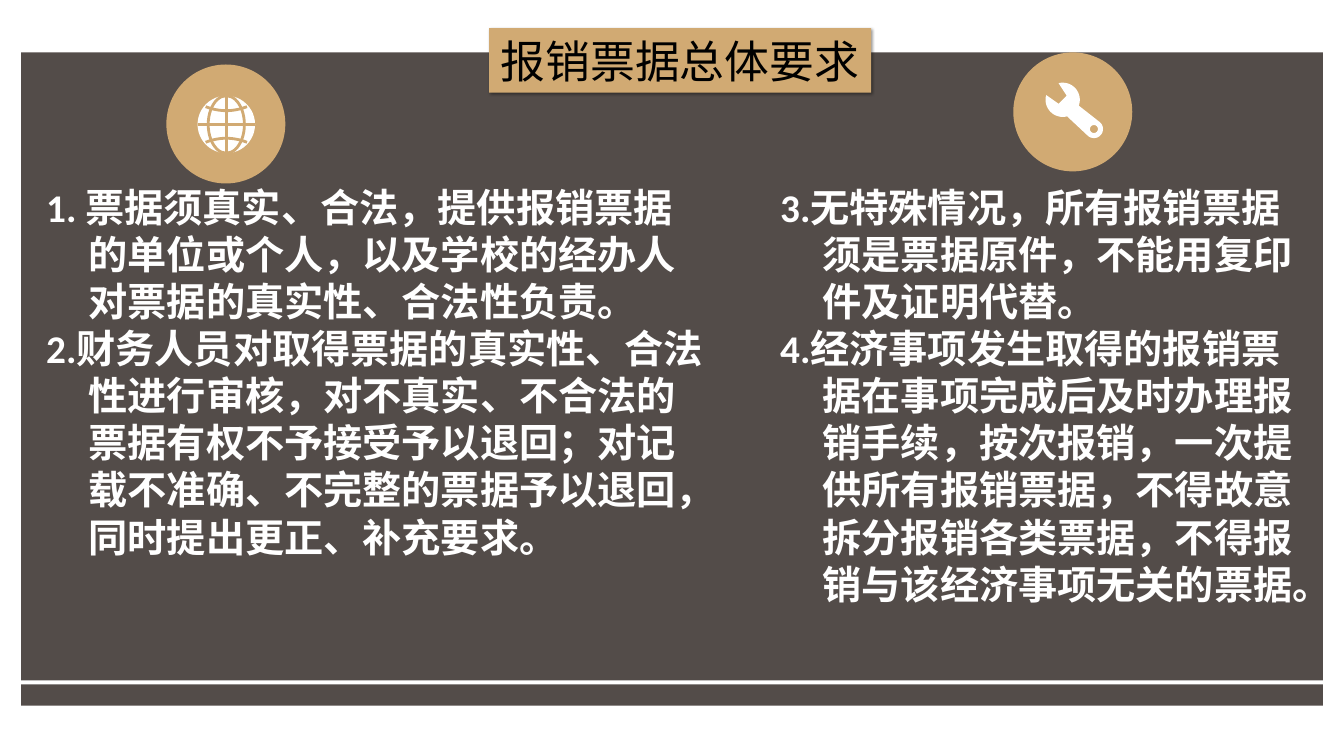
import math

import pptx
import pptx.dml.color
import pptx.enum.shapes
import pptx.enum.text
import pptx.oxml
import pptx.oxml.ns
import pptx.util
from pptx.util import Inches

BROWN, GOLD, WHITE, BLACK = "534C49", "D1AA73", "FFFFFF", "000000"
SHAPE = pptx.enum.shapes.MSO_SHAPE
NS = pptx.oxml.ns.nsdecls("a")

LEFT_RULES = [
    "1. 票据须真实、合法，提供报销票据的单位或个人，以及学校的经办人对票据的真实性、合法性负责。",
    "2.财务人员对取得票据的真实性、合法性进行审核，对不真实、不合法的票据有权不予接受予以退回；"
    "对记载不准确、不完整的票据予以退回，同时提出更正、补充要求。",
]
RIGHT_RULES = [
    "3.无特殊情况，所有报销票据须是票据原件，不能用复印件及证明代替。",
    "4.经济事项发生取得的报销票据在事项完成后及时办理报销手续，按次报销，一次提供所有报销票据，"
    "不得故意拆分报销各类票据，不得报销与该经济事项无关的票据。",
]


def color(hex_value):
    return pptx.dml.color.RGBColor.from_string(hex_value)


def paint(shape, fill):
    shape.shadow.inherit = False
    shape.fill.solid()
    shape.fill.fore_color.rgb = color(fill)
    shape.line.fill.background()


def add_filled(slide, kind, box, fill):
    shape = slide.shapes.add_shape(kind, *map(Inches, box))
    paint(shape, fill)
    return shape


def add_outline(slide, contours, closed=True):
    points = [[(Inches(x), Inches(y)) for x, y in contour] for contour in contours]
    builder = slide.shapes.build_freeform(*points[0][0])
    builder.add_line_segments(points[0][1:], close=closed)
    for contour in points[1:]:
        builder.move_to(*contour[0])
        builder.add_line_segments(contour[1:], close=closed)
    outline = builder.convert_to_shape()
    outline.shadow.inherit = False
    return outline


def style_gold_line(part):
    part.line.color.rgb = color(GOLD)
    part.line.width = pptx.util.Pt(2)


def add_globe(slide, left, top, size):
    middle_x, middle_y = left + size / 2, top + size / 2
    add_filled(slide, SHAPE.OVAL, (left, top, size, size), WHITE)
    meridian_width = size * 0.63
    meridian = slide.shapes.add_shape(
        SHAPE.OVAL, Inches(middle_x - meridian_width / 2), Inches(top),
        Inches(meridian_width), Inches(size))
    meridian.shadow.inherit = False
    meridian.fill.background()
    style_gold_line(meridian)
    for ends in ((left, middle_y, left + size, middle_y),
                 (middle_x, top, middle_x, top + size)):
        axis = slide.shapes.add_connector(
            pptx.enum.shapes.MSO_CONNECTOR.STRAIGHT, *map(Inches, ends))
        axis._element.spPr.append(pptx.oxml.parse_xml(f"<a:effectLst {NS}/>"))
        style_gold_line(axis)
    steps = [step / 8 for step in range(-8, 9)]
    for side in (-1, 1):
        curve = [(middle_x + t * size * 0.36,
                  middle_y + side * size * (0.24 + 0.07 * t * t)) for t in steps]
        parallel = add_outline(slide, [curve], closed=False)
        parallel.fill.background()
        style_gold_line(parallel)


def arc(center_x, center_y, radius, start, end, steps=16):
    angles = [math.radians(start + (end - start) * i / steps) for i in range(steps + 1)]
    return [(center_x + radius * math.cos(a), center_y + radius * math.sin(a)) for a in angles]


def add_wrench(slide, left, top):
    head = arc(0.17, 0.17, 0.17, -104, 20)
    handle_end = arc(0.48, 0.46, 0.09, -48, 132)
    jaw = arc(0.17, 0.17, 0.17, 75, 196)
    body = head + handle_end + jaw + [(0.13, 0.21), (0.21, 0.13)]
    eye = arc(0.48, 0.46, 0.04, 0, 360)
    wrench = add_outline(
        slide, [[(left + x, top + y) for x, y in contour] for contour in (body, eye)])
    paint(wrench, WHITE)


def add_rules(slide, box, rules):
    frame = slide.shapes.add_textbox(*map(Inches, box)).text_frame
    frame.word_wrap = True
    for index, rule in enumerate(rules):
        paragraph = frame.paragraphs[0] if index == 0 else frame.add_paragraph()
        paragraph.text = rule
        properties = paragraph._p.get_or_add_pPr()
        properties.set("marL", str(Inches(0.42)))
        properties.set("indent", str(Inches(-0.42)))
        paragraph.font.name = "Calibri"
        paragraph.font.size = pptx.util.Pt(28)
        paragraph.font.bold = True
        paragraph.font.color.rgb = color(WHITE)


def add_title(slide, box):
    title = slide.shapes.title
    title.left, title.top, title.width, title.height = map(Inches, box)
    paint(title, GOLD)
    effects = title._element.spPr.find(pptx.oxml.ns.qn("a:effectLst"))
    effects.append(pptx.oxml.parse_xml(
        f'<a:outerShdw {NS} blurRad="25400" dist="12700" dir="2700000">'
        f'<a:srgbClr val="{BLACK}"><a:alpha val="40000"/></a:srgbClr></a:outerShdw>'))
    frame = title.text_frame
    frame.text = "报销票据总体要求"
    frame.word_wrap = False
    frame.auto_size = pptx.enum.text.MSO_AUTO_SIZE.NONE
    frame.vertical_anchor = pptx.enum.text.MSO_ANCHOR.MIDDLE
    heading = frame.paragraphs[0]
    heading.alignment = pptx.enum.text.PP_ALIGN.CENTER
    heading.font.name = "Noto Sans CJK SC"
    heading.font.size = pptx.util.Pt(32)
    heading.font.color.rgb = color(BLACK)
    slide.shapes._spTree.append(title._element)


def add_panel(slide, left, top, width, height):
    add_filled(slide, SHAPE.RECTANGLE, (left, top, width, height), BROWN)
    add_filled(slide, SHAPE.RECTANGLE, (left, top + height - 0.25, width, 0.04), WHITE)


def main():
    deck = pptx.Presentation()
    deck.slide_width, deck.slide_height = Inches(13.33), Inches(7.5)
    slide = deck.slides.add_slide(deck.slide_layouts[5])
    add_panel(slide, 0.21, 0.52, 12.91, 6.48)
    for left, top in ((10.05, 0.52), (1.65, 0.64)):
        add_filled(slide, SHAPE.OVAL, (left, top, 1.18, 1.18), GOLD)
    add_globe(slide, 1.96, 0.95, 0.57)
    add_wrench(slide, 10.37, 0.82)
    add_rules(slide, (0.36, 1.77, 6.72, 3.87), LEFT_RULES)
    add_rules(slide, (7.64, 1.77, 5.34, 4.34), RIGHT_RULES)
    add_title(slide, (4.85, 0.28, 3.79, 0.64))
    deck.save("out.pptx")


if __name__ == "__main__":
    main()
